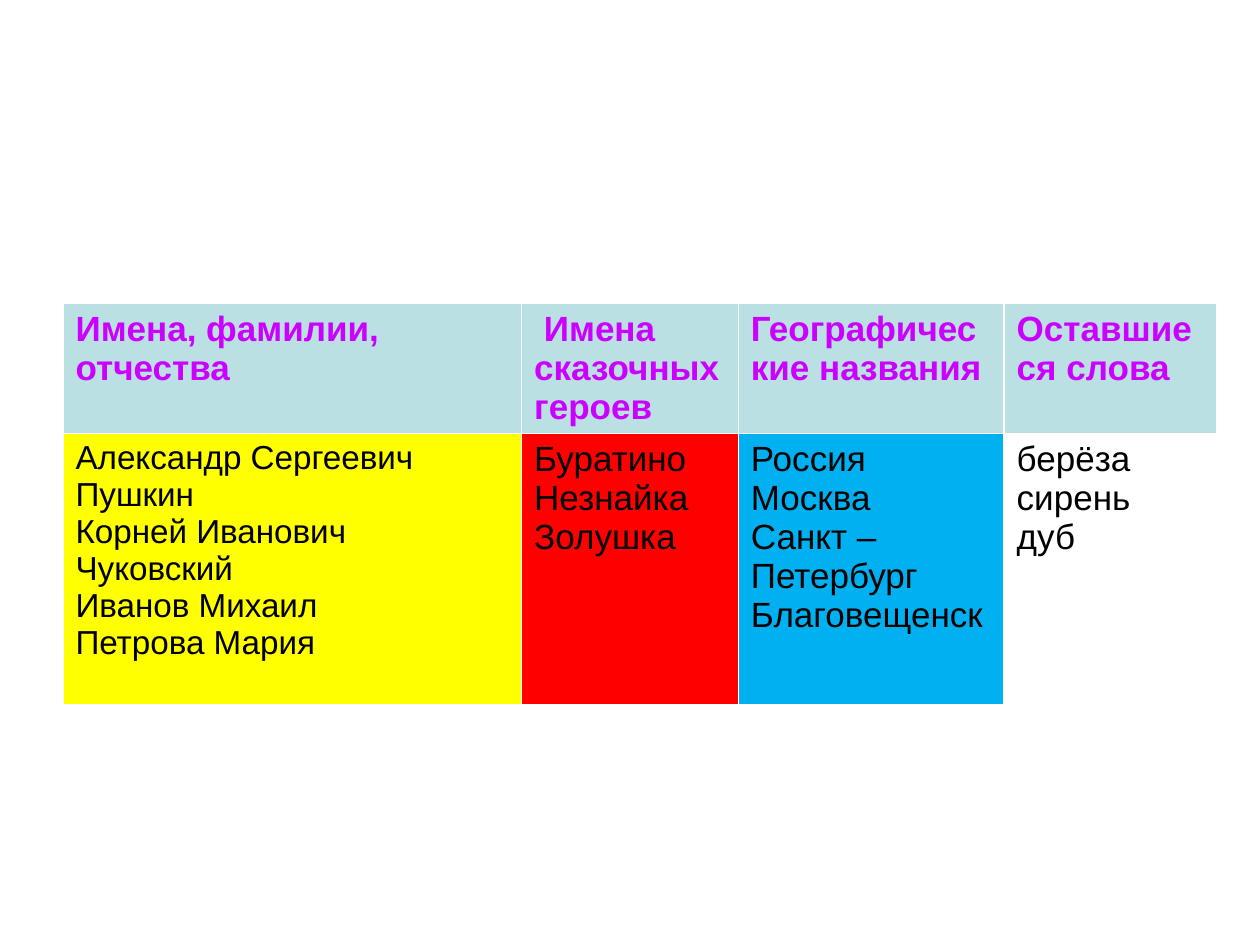
"""Build a slide that sorts proper names and common words into a table."""
from pptx import Presentation
from pptx.dml.color import RGBColor
from pptx.util import Inches, Pt

FONT = "Arial"
PURPLE = RGBColor(0xCC, 0x00, 0xFF)
PALE_TEAL = RGBColor(0xBB, 0xE0, 0xE3)
BLACK = RGBColor(0x00, 0x00, 0x00)
YELLOW = RGBColor(0xFF, 0xFF, 0x00)
RED = RGBColor(0xFF, 0x00, 0x00)
BLUE = RGBColor(0x00, 0xB0, 0xF0)
WHITE = RGBColor(0xFF, 0xFF, 0xFF)

ROW_HEIGHTS = (1.02, 2.15)
# width, heading, words, word size, fill
GROUPS = (
    (3.64, "Имена, фамилии, отчества",
     ("Александр Сергеевич Пушкин", "Корней Иванович Чуковский",
      "Иванов Михаил", "Петрова Мария"), 19, YELLOW),
    (1.72, " Имена сказочных героев",
     ("Буратино", "Незнайка", "Золушка"), 20, RED),
    (2.11, "Географические названия",
     ("Россия", "Москва", "Санкт – Петербург", "Благовещенск"), 20, BLUE),
    (1.69, "Оставшиеся слова",
     ("берёза", "сирень", "дуб"), 20, WHITE),
)


def fill_cell(cell, lines, size, color, fill, bold=False):
    """Write one paragraph per line and colour the cell."""
    cell.fill.solid()
    cell.fill.fore_color.rgb = fill
    cell.text_frame.text = "\n".join(lines)
    for para in cell.text_frame.paragraphs:
        para.font.name = FONT
        para.font.size = Pt(size)
        para.font.bold = bold
        para.font.color.rgb = color


def add_word_table(page):
    """Add the table with a column for each group of words."""
    width = sum(group[0] for group in GROUPS)
    table = page.shapes.add_table(
        len(ROW_HEIGHTS), len(GROUPS), Inches(0.5), Inches(2.41),
        Inches(width), Inches(sum(ROW_HEIGHTS))).table
    for row, height in zip(table.rows, ROW_HEIGHTS):
        row.height = Inches(height)
    for index, (width, heading, words, size, fill) in enumerate(GROUPS):
        table.columns[index].width = Inches(width)
        fill_cell(table.cell(0, index), [heading], 20, PURPLE, PALE_TEAL, bold=True)
        fill_cell(table.cell(1, index), words, size, BLACK, fill)


def main():
    """Create the deck and save it."""
    deck = Presentation()
    deck.slide_width = Inches(10)
    deck.slide_height = Inches(7.5)
    page = deck.slides.add_slide(deck.slide_layouts[6])
    add_word_table(page)
    deck.save("out.pptx")


if __name__ == "__main__":
    main()
